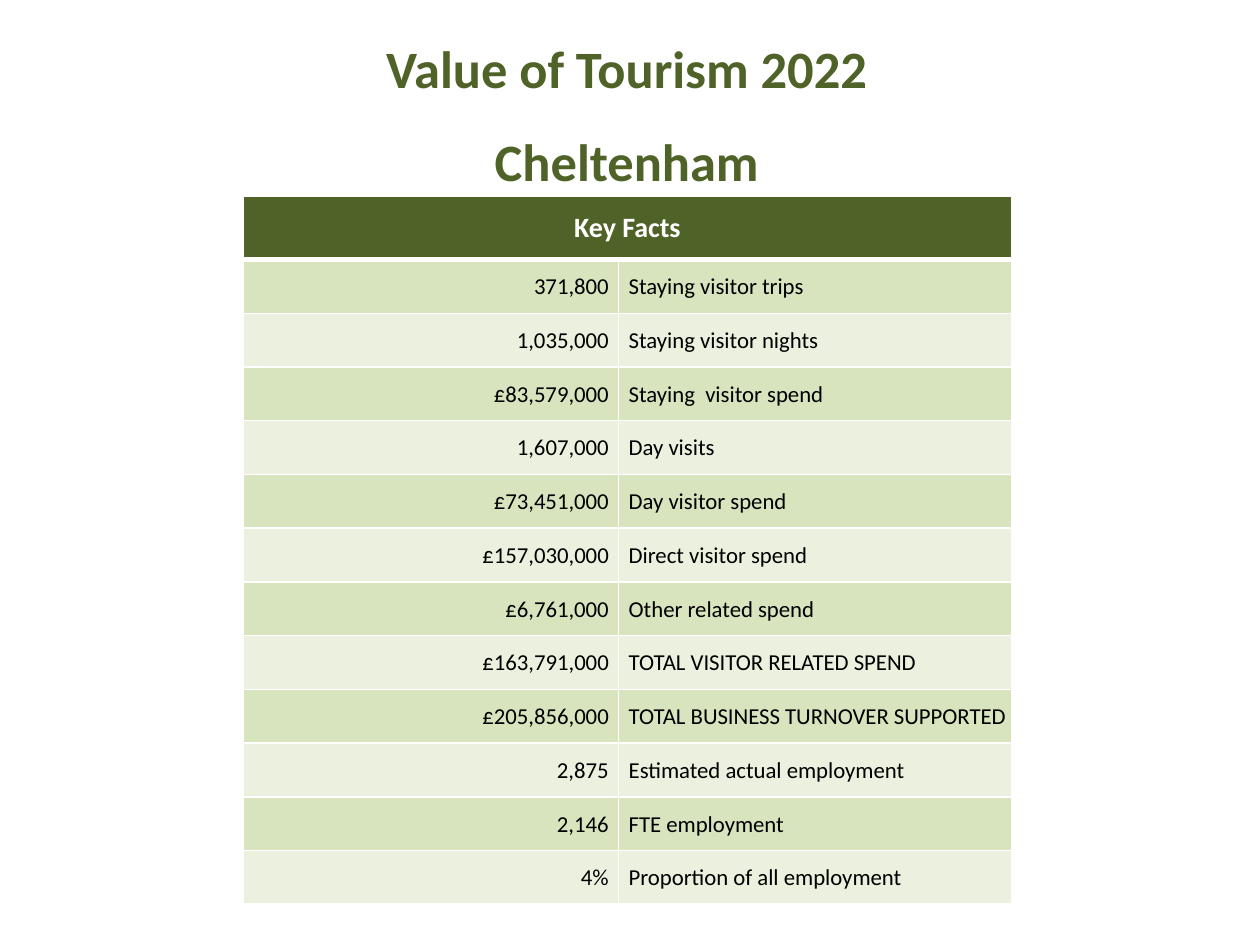
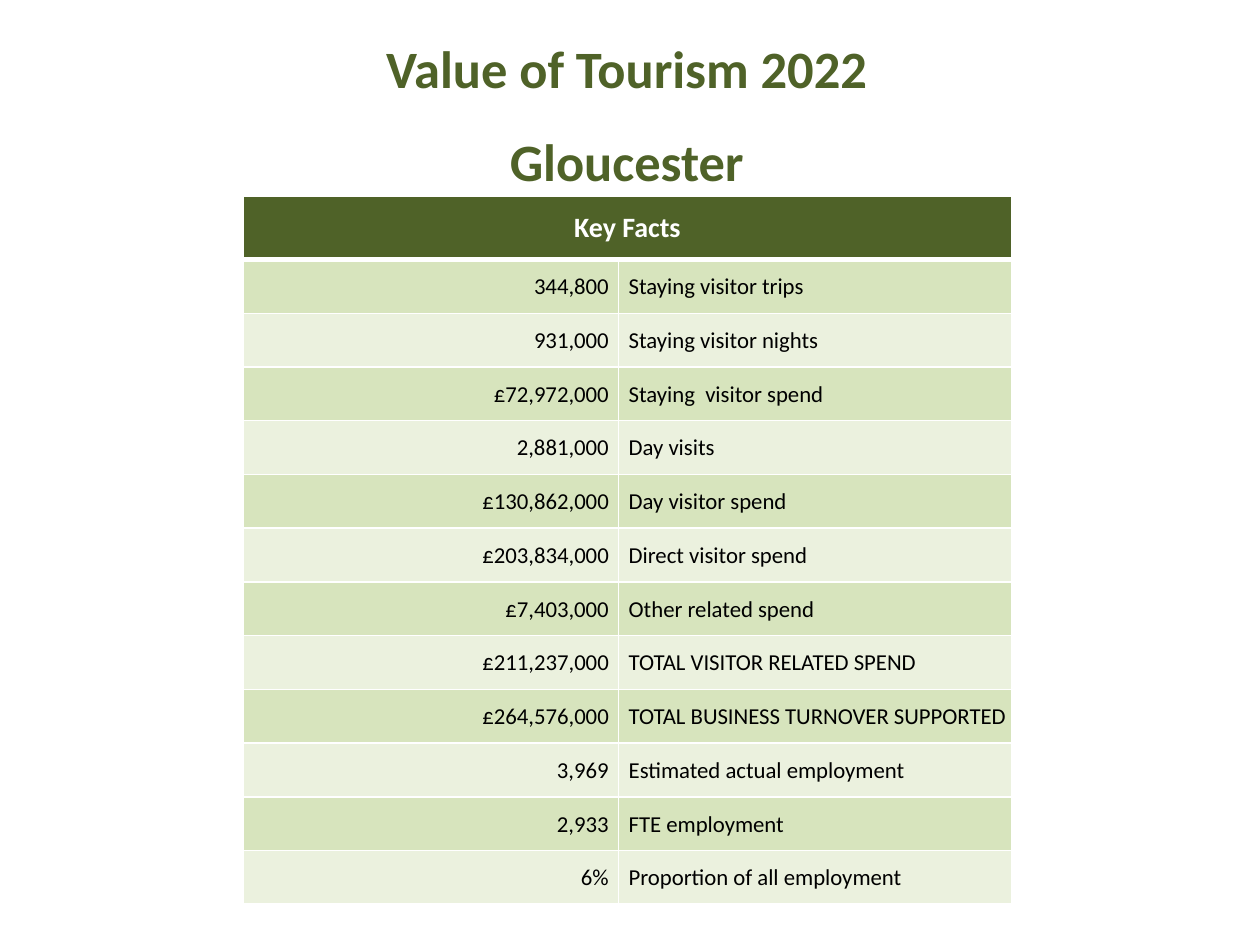
import pptx
import pptx.util
import pptx.dml.color
import pptx.enum.text
import pptx.oxml
import pptx.oxml.ns

TITLE = "Value of Tourism 2022"
HEADING = "Key Facts"
FACTS = [
    "Staying visitor trips",
    "Staying visitor nights",
    "Staying  visitor spend",
    "Day visits",
    "Day visitor spend",
    "Direct visitor spend",
    "Other related spend",
    "TOTAL VISITOR RELATED SPEND",
    "TOTAL BUSINESS TURNOVER SUPPORTED",
    "Estimated actual employment",
    "FTE employment",
    "Proportion of all employment",
]
PLACES = {
    "Cheltenham": [
        "371,800", "1,035,000", "£83,579,000", "1,607,000",
        "£73,451,000", "£157,030,000", "£6,761,000", "£163,791,000",
        "£205,856,000", "2,875", "2,146", "4%",
    ],
    "Gloucester": [
        "344,800", "931,000", "£72,972,000", "2,881,000",
        "£130,862,000", "£203,834,000", "£7,403,000", "£211,237,000",
        "£264,576,000", "3,969", "2,933", "6%",
    ],
}

FONT = "Calibri"
COLORS = {
    "dark": "4F6228",
    "band": "D7E4BD",
    "pale": "EBF1DE",
    "rule": "FFFFFF",
    "text": "000000",
}
SLIDE_W, SLIDE_H = 10, 7.5
TITLE_BOX = (1.39, 0.24, 7.17, 1.35)
TABLE_LEFT, TABLE_TOP, TABLE_H = 1.93, 1.56, 5.62
COLUMN_WIDTHS = (2.98, 3.12)
HEADER_H = 0.5
ROW_H = (TABLE_H - HEADER_H) / len(FACTS)
VALUE_INSETS = (0.01, 0.01, 0.08, 0)
FACT_INSETS = (0.08, 0.01, 0.01, 0)
HEADER_INSETS = (0.1, 0.05, 0.1, 0.05)

Inches = pptx.util.Inches
Pt = pptx.util.Pt
ALIGN = pptx.enum.text.PP_ALIGN


def rgb(name):
    return pptx.dml.color.RGBColor.from_string(COLORS[name])


def style(p, size, color, bold, align):
    p.alignment = align
    for r in p.runs:
        r.font.name = FONT
        r.font.size = Pt(size)
        r.font.bold = bold
        r.font.color.rgb = rgb(color)


def add_borders(cell, bottom):
    tc_pr = cell._tc.get_or_add_tcPr()
    for side, width in (("L", 1), ("R", 1), ("T", 1), ("B", bottom)):
        tc_pr.append(pptx.oxml.parse_xml(
            f'<a:ln{side} {pptx.oxml.ns.nsdecls("a")} w="{Pt(width)}">'
            f'<a:solidFill><a:srgbClr val="{COLORS["rule"]}"/></a:solidFill>'
            f'</a:ln{side}>'))


def fill_cell(cell, text, fill, insets, size, color, bold, align, bottom=1):
    cell.text_frame.text = text
    style(cell.text_frame.paragraphs[0], size, color, bold, align)
    cell.vertical_anchor = pptx.enum.text.MSO_ANCHOR.MIDDLE
    (cell.margin_left, cell.margin_top,
     cell.margin_right, cell.margin_bottom) = map(Inches, insets)
    add_borders(cell, bottom)
    cell.fill.solid()
    cell.fill.fore_color.rgb = rgb(fill)


def add_title(s, place):
    tf = s.shapes.add_textbox(*map(Inches, TITLE_BOX)).text_frame
    tf.word_wrap = True
    tf.text = f"{TITLE}\n{place}"
    for p in tf.paragraphs:
        style(p, 30, "dark", True, ALIGN.CENTER)
    tf.paragraphs[1].space_before = Pt(17)


def add_key_facts(s, values):
    table = s.shapes.add_table(
        len(FACTS) + 1, 2, Inches(TABLE_LEFT), Inches(TABLE_TOP),
        Inches(sum(COLUMN_WIDTHS)), Inches(TABLE_H)).table
    for column, width in zip(table.columns, COLUMN_WIDTHS):
        column.width = Inches(width)
    for i, row in enumerate(table.rows):
        row.height = Inches(ROW_H if i else HEADER_H)

    for cell, text in zip(table.rows[0].cells, (HEADING, "")):
        fill_cell(cell, text, "dark", HEADER_INSETS, 16, "rule", True,
                  ALIGN.CENTER, bottom=3)
    table.cell(0, 0).merge(table.cell(0, 1))

    for i, (value, fact) in enumerate(zip(values, FACTS), start=1):
        fill = "band" if i % 2 else "pale"
        fill_cell(table.cell(i, 0), value, fill, VALUE_INSETS, 13, "text",
                  False, ALIGN.RIGHT)
        fill_cell(table.cell(i, 1), fact, fill, FACT_INSETS, 13, "text",
                  False, ALIGN.LEFT)


def main():
    prs = pptx.Presentation()
    prs.slide_width, prs.slide_height = Inches(SLIDE_W), Inches(SLIDE_H)
    for place, values in PLACES.items():
        s = prs.slides.add_slide(prs.slide_layouts[6])
        add_title(s, place)
        add_key_facts(s, values)
    prs.save("out.pptx")


if __name__ == "__main__":
    main()
